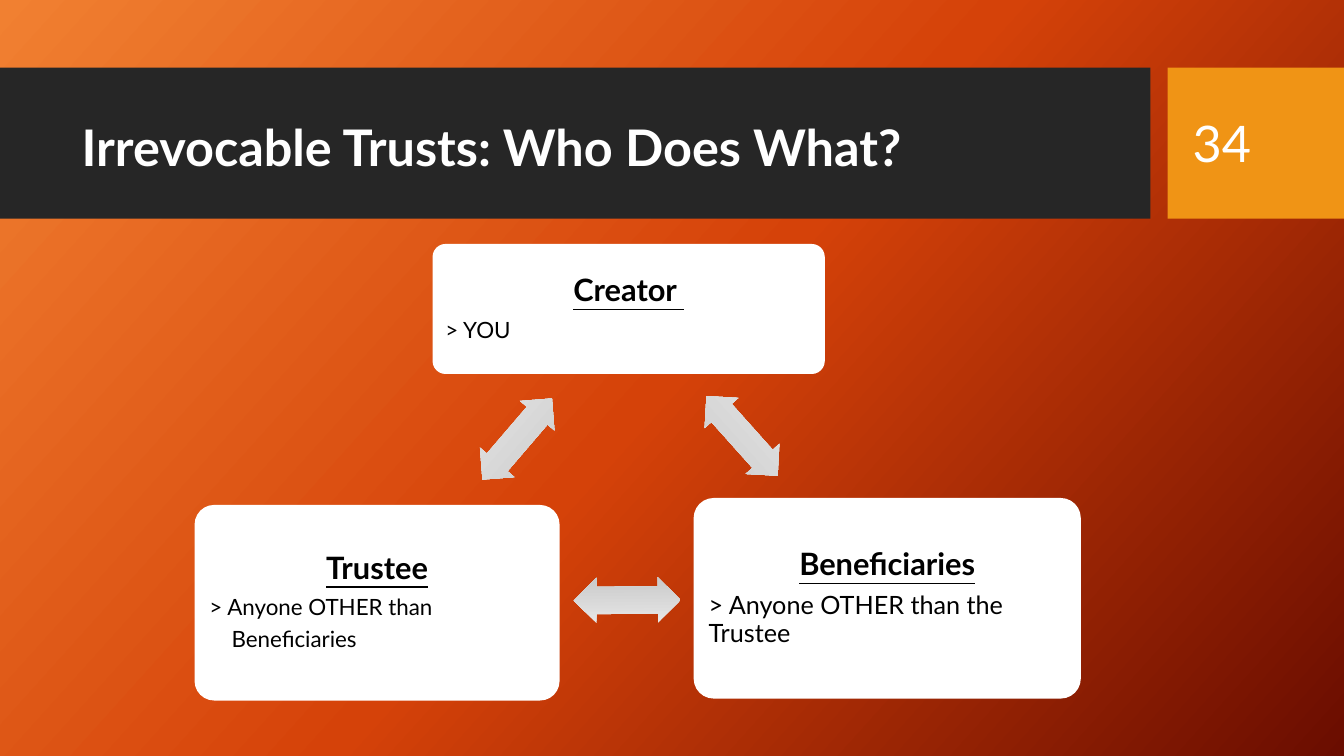
from copy import deepcopy

from pptx import Presentation
from pptx.dml.color import RGBColor
from pptx.enum import shapes, text
from pptx.util import Inches, Pt

FONT = "Lato"
WHITE = RGBColor(0xFF, 0xFF, 0xFF)
BLACK = RGBColor(0x00, 0x00, 0x00)
CHARCOAL = RGBColor(0x26, 0x26, 0x26)
AMBER = RGBColor(0xF0, 0x94, 0x15)
BACKDROP = [RGBColor(0xF1, 0x80, 0x31), RGBColor(0xD5, 0x42, 0x09), RGBColor(0x6A, 0x0D, 0x00)]
SILVER = [RGBColor(0xE7, 0xE7, 0xE7), RGBColor(0xC9, 0xC9, 0xC9)]

ROLES = [
    ((4.29, 2.42, 3.89, 1.29), "Creator ", 16, [("> YOU", 0)]),
    ((6.88, 4.94, 3.84, 1.99), "Beneficiaries", 18, [("> Anyone OTHER than the Trustee", 0)]),
    ((1.93, 5.01, 3.62, 1.94), "Trustee", 16, [("> Anyone OTHER than", 0), ("Beneficiaries", 0.22)]),
]
ARROWS = [(6.83, 4.1, 48.2), (5.69, 5.73, 179.6), (4.6, 4.13, 310.6)]


def fill_gradient(fill, colors, clockwise):
    """Fill with evenly spaced colour stops at a clockwise angle."""
    fill.gradient()
    fill.gradient_angle = 360 - clockwise
    stop_list = fill.gradient_stops[0]._gs.getparent()
    for _ in colors[2:]:
        stop_list.append(deepcopy(stop_list[-1]))
    for index, (stop, color) in enumerate(zip(fill.gradient_stops, colors)):
        stop.position = index / (len(colors) - 1)
        stop.color.rgb = color


def add_block(page, kind, box):
    """Add a preset shape without line or shadow."""
    block = page.shapes.add_shape(kind, *map(Inches, box))
    block.shadow.inherit = False
    block.line.fill.background()
    return block


def add_span(para, words, size, color, bold=False, underline=False):
    """Add one formatted run to a paragraph."""
    span = para.add_run()
    span.text = words
    span.font.name = FONT
    span.font.size = Pt(size)
    span.font.color.rgb = color
    span.font.bold = bold
    span.font.underline = underline


def add_header(page, box, title, number):
    """Place the title band and the number tile across the box."""
    left, top, width, height = box
    tile_width = 1.75
    tile_left = left + width - tile_width
    bands = [(left, tile_left - 0.17 - left, CHARCOAL), (tile_left, tile_width, AMBER)]
    for band_left, band_width, color in bands:
        band = add_block(page, shapes.MSO_SHAPE.RECTANGLE, (band_left, top, band_width, height))
        band.fill.solid()
        band.fill.fore_color.rgb = color

    heading = page.shapes.title
    heading.left, heading.top = Inches(left + 0.71), Inches(top + 0.17)
    heading.width, heading.height = Inches(10.29), Inches(1.31)
    label = page.shapes.add_textbox(
        Inches(tile_left + 0.15), Inches(top + 0.15), Inches(1.26), Inches(1.19))
    for holder, words, bold in ((heading, title, True), (label, number, False)):
        frame = holder.text_frame
        frame.word_wrap = True
        frame.auto_size = text.MSO_AUTO_SIZE.NONE
        frame.vertical_anchor = text.MSO_ANCHOR.MIDDLE
        para = frame.paragraphs[0]
        para.alignment = text.PP_ALIGN.LEFT
        para.line_spacing = 0.9 if bold else 1.0
        add_span(para, words, 36, WHITE, bold)


def add_role(page, box, name, size, lines):
    """Place a rounded card with a role name and its lines."""
    card = add_block(page, shapes.MSO_SHAPE.ROUNDED_RECTANGLE, box)
    card.adjustments[0] = 0.1
    card.fill.solid()
    card.fill.fore_color.rgb = WHITE
    frame = card.text_frame
    frame.word_wrap = True
    frame.vertical_anchor = text.MSO_ANCHOR.MIDDLE
    frame.margin_left = frame.margin_right = Inches(0.09)
    frame.margin_top = frame.margin_bottom = Inches(0.09)

    para = frame.paragraphs[0]
    para.alignment = text.PP_ALIGN.CENTER
    para.line_spacing = 0.9
    para.space_after = Pt(22 * 0.35)
    add_span(para, name, 22, BLACK, bold=True, underline=True)
    for words, indent in lines:
        para = frame.add_paragraph()
        para._p.get_or_add_pPr().set("marL", str(Inches(indent)))
        para.alignment = text.PP_ALIGN.LEFT
        para.line_spacing = 0.9
        para.space_after = Pt(size * 0.35)
        add_span(para, words, size, BLACK)


def add_arrow(page, box, rotation):
    """Place a turned double arrow between two cards."""
    arrow = add_block(page, shapes.MSO_SHAPE.LEFT_RIGHT_ARROW, box)
    arrow.adjustments[0] = 0.6
    arrow.adjustments[1] = 0.5
    arrow.rotation = rotation
    fill_gradient(arrow.fill, SILVER, 90)


def main():
    """Build and save the deck."""
    deck = Presentation()
    deck.slide_width, deck.slide_height = Inches(13.33), Inches(7.5)
    page = deck.slides.add_slide(deck.slide_layouts[5])
    fill_gradient(page.background.fill, BACKDROP, 42)
    add_header(page, (0, 0.67, 13.33, 1.5), "Irrevocable Trusts: Who Does What?", "34")
    # The title placeholder must sit in front of the header band.
    tree = page.shapes.title._element.getparent()
    tree.append(page.shapes.title._element)
    for role in ROLES:
        add_role(page, *role)
    for left, top, rotation in ARROWS:
        add_arrow(page, (left, top, 1.06, 0.45), rotation)
    deck.save("out.pptx")


if __name__ == "__main__":
    main()
